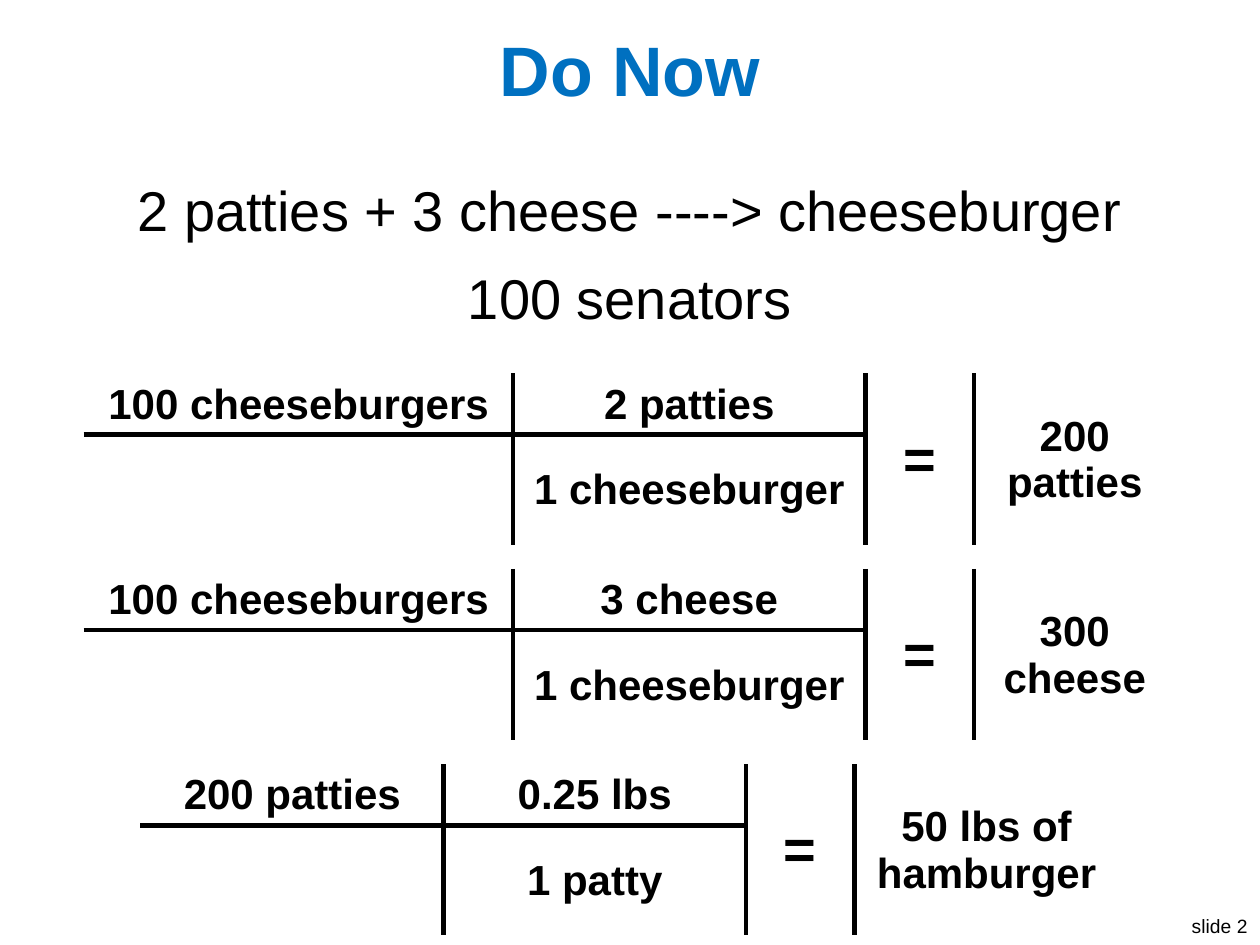
from lxml.etree import SubElement
from pptx import Presentation
from pptx.dml.color import RGBColor
from pptx.enum.text import MSO_ANCHOR, PP_ALIGN
from pptx.oxml.ns import qn
from pptx.util import Inches, Pt

COLORS = {"title": "0070C0", "ink": "000000", "paper": "FFFFFF"}
FONT = "Arial"
WIDTH, HEIGHT = 10, 7.5
TOP, PITCH = 2.97, 1.55
ROWS = (0.47, 0.83)
WIDE = (3.4, 2.8, 0.86, 1.6)
NARROW = (2.4, 2.4, 0.86, 2.1)
CONVERSIONS = [
    (WIDE, "100 cheeseburgers", "2 patties", "1 cheeseburger", "200 patties"),
    (WIDE, "100 cheeseburgers", "3 cheese", "1 cheeseburger", "300 cheese"),
    (NARROW, "200 patties", "0.25 lbs", "1 patty", "50 lbs of hamburger"),
]
BORDERS = {(0, 0): "RB", (0, 1): "LRB", (0, 2): "L",
           (1, 0): "RT", (1, 1): "LRT", (1, 2): "L"}


def write(tf, *lines, size=24, color="ink", bold=False, align=PP_ALIGN.CENTER, before=0):
    """Fill a text frame with one formatted paragraph per line."""
    for i, line in enumerate(lines):
        p = tf.paragraphs[0] if i == 0 else tf.add_paragraph()
        p.alignment, p.space_before = align, Pt(before)
        r = p.add_run()
        r.text = line
        r.font.name, r.font.size, r.font.bold = FONT, Pt(size), bold
        r.font.color.rgb = RGBColor.from_string(COLORS[color])


class Deck:
    """Holds the presentation style and the current slide."""

    def __init__(self):
        """Start a presentation with one title-only slide."""
        self.prs = Presentation()
        self.prs.slide_width, self.prs.slide_height = Inches(WIDTH), Inches(HEIGHT)
        self.s = self.prs.slides.add_slide(self.prs.slide_layouts[5])

    def title(self, text, x, y, w, h):
        """Place and format the title placeholder."""
        sp = self.s.shapes.title
        sp.left, sp.top, sp.width, sp.height = map(Inches, (x, y, w, h))
        sp.text_frame.vertical_anchor = MSO_ANCHOR.MIDDLE
        write(sp.text_frame, text, size=40, color="title", bold=True)

    def text(self, x, y, w, h, *lines, wrap=True, **style):
        """Add a text box."""
        tf = self.s.shapes.add_textbox(*map(Inches, (x, y, w, h))).text_frame
        tf.word_wrap = wrap
        write(tf, *lines, **style)

    def border(self, cell, sides):
        """Rule the named sides of a cell in ink."""
        tc_pr = cell._tc.get_or_add_tcPr()
        for i, side in enumerate(sides):
            ln = SubElement(tc_pr, qn(f"a:ln{side}"), w=str(Pt(3)))
            fill = SubElement(ln, qn("a:solidFill"))
            SubElement(fill, qn("a:srgbClr"), val=COLORS["ink"])
            tc_pr.insert(i, ln)

    def conversion(self, y, cols, given, top, bottom, result):
        """Add a centred unit-conversion table."""
        w = sum(cols)
        box = map(Inches, ((WIDTH - w) / 2, y, w, sum(ROWS)))
        table = self.s.shapes.add_table(len(ROWS), len(cols), *box).table
        table.first_row = table.horz_banding = False
        for col, width in zip(table.columns, cols):
            col.width = Inches(width)
        for row, height in zip(table.rows, ROWS):
            row.height = Inches(height)
        texts = [[given, top, "=", result], ["", bottom, "", ""]]
        for i, row in enumerate(texts):
            for j, text in enumerate(row):
                cell = table.cell(i, j)
                cell.vertical_anchor = MSO_ANCHOR.MIDDLE
                cell.margin_top = cell.margin_bottom = Inches(0.04)
                cell.fill.solid()
                cell.fill.fore_color.rgb = RGBColor.from_string(COLORS["paper"])
                self.border(cell, BORDERS.get((i, j), ""))
                if text:
                    write(cell.text_frame, text, size=32 if text == "=" else 24, bold=True)
        for j in (2, 3):
            table.cell(0, j).merge(table.cell(1, j))


def main():
    """Build the slide and save it."""
    deck = Deck()
    deck.title("Do Now", 0.2, 0.14, 9.6, 0.8)
    deck.text(0.2, 1.34, 9.6, 1.4, "2 patties + 3 cheese ----> cheeseburger",
              "100 senators", size=32, before=12)
    for i, (cols, *texts) in enumerate(CONVERSIONS):
        deck.conversion(TOP + i * PITCH, cols, *texts)
    deck.text(9.25, 7.21, 0.75, 0.29, "slide 2", wrap=False, size=11, align=PP_ALIGN.RIGHT)
    deck.prs.save("out.pptx")


if __name__ == "__main__":
    main()
